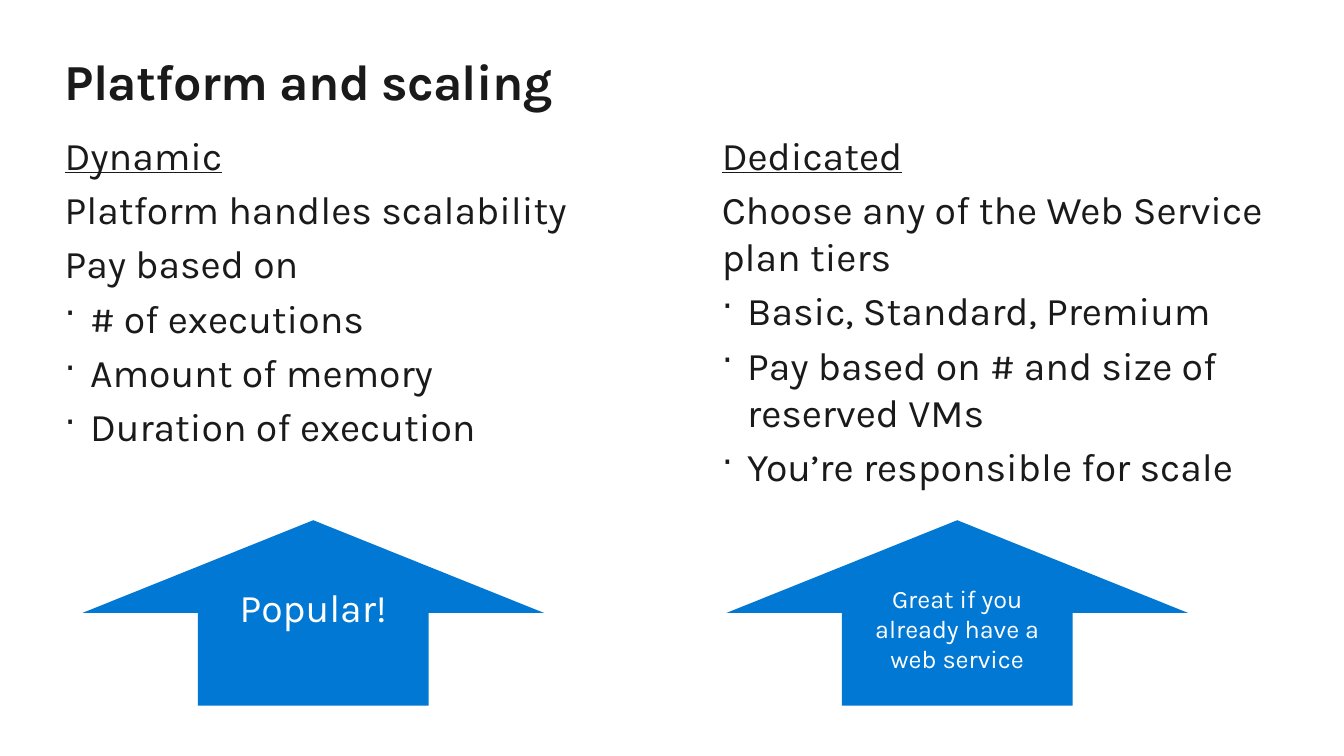
from lxml.etree import SubElement
from pptx import Presentation
from pptx.dml.color import RGBColor
from pptx.enum.shapes import MSO_SHAPE
from pptx.enum.text import MSO_ANCHOR, PP_ALIGN
from pptx.oxml.ns import qn
from pptx.util import Cm, Pt

FONT = "Karla"
INK, BLUE, WHITE = "1A1A1A", "0078D4", "FFFFFF"
TITLE = "Platform and scaling"
# Lengths in centimetres
COLUMNS = [
    {
        "left": 1.63, "width": 14.05, "height": 9.8,
        "heading": "Dynamic",
        "lines": ["Platform handles scalability", "Pay based on"],
        "bullets": ["# of executions", "Amount of memory", "Duration of execution"],
        "arrow_left": 2.08, "arrow_text": "Popular!", "arrow_size": 28,
    },
    {
        "left": 18.19, "width": 14.94, "height": 10.77,
        "heading": "Dedicated",
        "lines": ["Choose any of the Web Service plan tiers"],
        "bullets": ["Basic, Standard, Premium",
                    "Pay based on # and size of reserved VMs",
                    "You’re responsible for scale"],
        "arrow_left": 18.31, "arrow_size": 18,
        "arrow_text": "Great if you already have an web service".replace("an web", "a web"),
    },
]
BODY_TOP = 3.3
ARROW_TOP, ARROW_WIDTH, ARROW_HEIGHT = 13.11, 11.63, 4.67


def color(hex_value):
    return RGBColor.from_string(hex_value)


def set_font(paragraph, size, hex_value):
    font = paragraph.font
    font.name, font.size = FONT, Pt(size)
    font.color.rgb = color(hex_value)
    return font


def prepare_frame(shape, horizontal=0, vertical=0):
    """Wrap the text from the top of the shape, inside the given margins."""
    frame = shape.text_frame
    frame.word_wrap = True
    frame.vertical_anchor = MSO_ANCHOR.TOP
    frame.margin_left = frame.margin_right = Cm(horizontal)
    frame.margin_top = frame.margin_bottom = Cm(vertical)
    return frame


def add_text_box(slide, left, top, width, height):
    return prepare_frame(slide.shapes.add_textbox(Cm(left), Cm(top), Cm(width), Cm(height)))


def add_bullet(paragraph):
    properties = paragraph._p.get_or_add_pPr()
    indent = Cm(0.64)
    properties.set("marL", str(indent))
    properties.set("indent", str(-indent))
    SubElement(properties, qn("a:buSzPct"), val="90000")
    SubElement(properties, qn("a:buChar"), char="·")


def add_title(slide):
    paragraph = add_text_box(slide, 1.63, 1.27, 30.61, 1.55).paragraphs[0]
    run = paragraph.add_run()
    run.text = TITLE
    run._r.get_or_add_rPr().set("spc", "-50")
    set_font(paragraph, 36, INK).bold = True


def add_body(slide, column):
    frame = add_text_box(slide, column["left"], BODY_TOP, column["width"], column["height"])
    texts = [column["heading"], *column["lines"], *column["bullets"]]
    first_bullet = len(texts) - len(column["bullets"])
    for index, text in enumerate(texts):
        paragraph = frame.add_paragraph() if index else frame.paragraphs[0]
        paragraph.text = text
        if index:
            paragraph.space_before = Pt(5.2)
        if index >= first_bullet:
            add_bullet(paragraph)
        set_font(paragraph, 28, INK).underline = index == 0


def add_arrow(slide, column):
    arrow = slide.shapes.add_shape(MSO_SHAPE.UP_ARROW, Cm(column["arrow_left"]), Cm(ARROW_TOP),
                                   Cm(ARROW_WIDTH), Cm(ARROW_HEIGHT))
    arrow.shadow.inherit = False
    arrow.fill.solid()
    arrow.fill.fore_color.rgb = color(BLUE)
    arrow.line.fill.background()
    paragraph = prepare_frame(arrow, 0.51, 0.41).paragraphs[0]
    paragraph.text = column["arrow_text"]
    paragraph.alignment = PP_ALIGN.CENTER
    set_font(paragraph, column["arrow_size"], WHITE)


def main():
    presentation = Presentation()
    presentation.slide_width, presentation.slide_height = Cm(33.87), Cm(19.05)
    slide = presentation.slides.add_slide(presentation.slide_layouts[6])
    add_title(slide)
    for column in COLUMNS:
        add_body(slide, column)
        add_arrow(slide, column)
    presentation.save("out.pptx")


if __name__ == "__main__":
    main()
